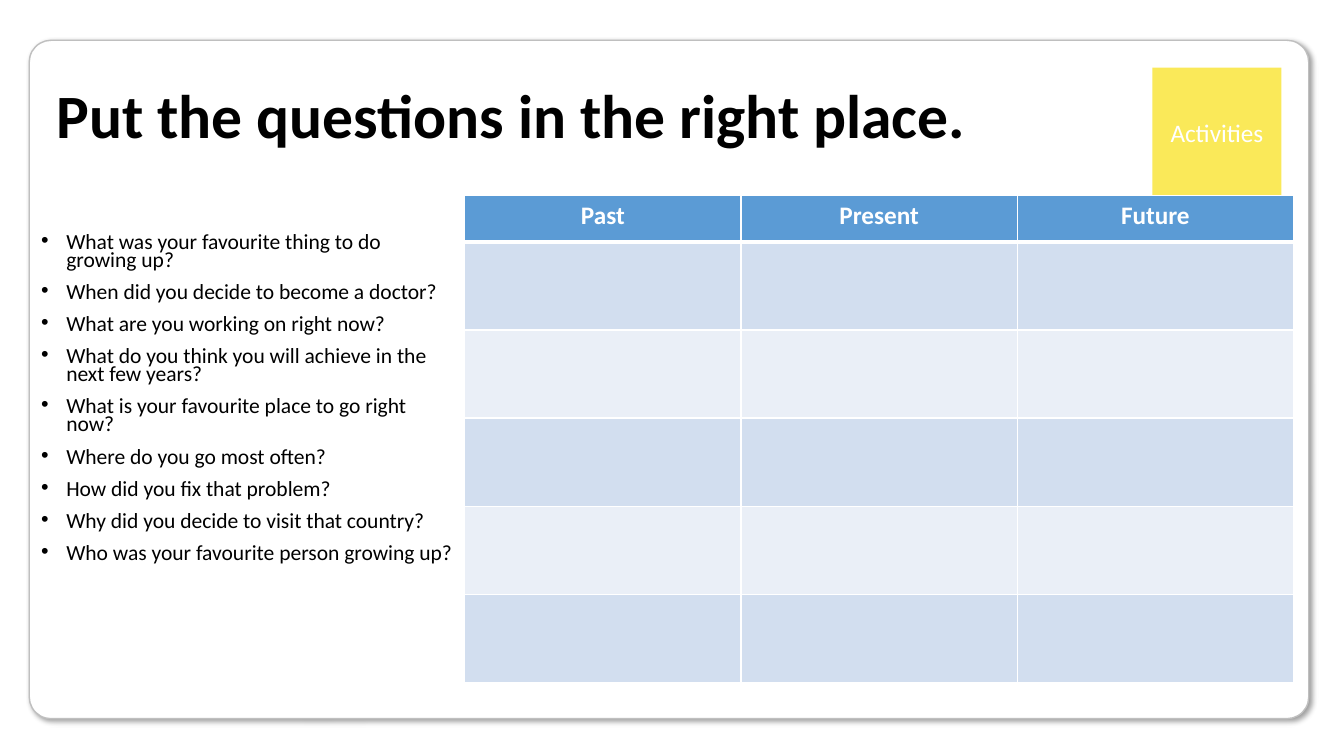
from dataclasses import dataclass

from lxml import etree
from pptx import Presentation
from pptx import util as u
from pptx.dml.color import RGBColor
from pptx.enum import shapes, text
from pptx.oxml import ns


@dataclass(frozen=True)
class Theme:
    font: str = "Calibri"
    ink: str = "000000"
    paper: str = "FFFFFF"
    frame: str = "BFBFBF"
    tag: str = "FAE959"
    header: str = "5B9BD5"
    bands: tuple = ("D2DEEF", "EAEFF7")
    title_size: float = 44
    label_size: float = 18
    question_size: float = 15.4


THEME = Theme()
TENSES = ["Past", "Present", "Future"]
QUESTIONS = [
    "What was your favourite thing to do growing up?",
    "When did you decide to become a doctor?",
    "What are you working on right now?",
    "What do you think you will achieve in the next few years?",
    "What is your favourite place to go right now?",
    "Where do you go most often?",
    "How did you fix that problem?",
    "Why did you decide to visit that country?",
    "Who was your favourite person growing up?",
]


def rgb(color):
    return RGBColor.from_string(color)


def add(parent, tag, **attrs):
    return etree.SubElement(parent, ns.qn(tag), {k: str(v) for k, v in attrs.items()})


def write(p, words, size=THEME.label_size, color=THEME.ink, bold=False,
          align=text.PP_ALIGN.LEFT, spacing=1.0, before=0):
    p.alignment = align
    p.line_spacing = spacing
    p.space_before = u.Pt(before)
    r = p.add_run()
    r.text = words
    r.font.name = THEME.font
    r.font.size = u.Pt(size)
    r.font.bold = bold
    r.font.color.rgb = rgb(color)


def add_box(s, box, kind, fill):
    sp = s.shapes.add_shape(kind, *map(u.Inches, box))
    sp.shadow.inherit = False
    sp.fill.solid()
    sp.fill.fore_color.rgb = rgb(fill)
    sp.line.fill.background()
    return sp


def add_text(s, box, anchor):
    tf = s.shapes.add_textbox(*map(u.Inches, box)).text_frame
    tf.word_wrap = True
    tf.vertical_anchor = anchor
    return tf


def add_frame(s, box):
    sp = add_box(s, box, shapes.MSO_SHAPE.ROUNDED_RECTANGLE, THEME.paper)
    sp.adjustments[0] = 0.032
    sp.line.color.rgb = rgb(THEME.frame)
    sp.line.width = u.Pt(1)
    effects = sp._element.spPr.find(ns.qn("a:effectLst"))
    shadow = add(effects, "a:outerShdw", blurRad=u.Pt(4), dist=u.Pt(3),
                 dir=45 * 60000, algn="tl", rotWithShape=0)
    add(add(shadow, "a:srgbClr", val=THEME.ink), "a:alpha", val=40000)


def add_tag(s, box):
    tf = add_box(s, box, shapes.MSO_SHAPE.RECTANGLE, THEME.tag).text_frame
    tf.vertical_anchor = text.MSO_ANCHOR.MIDDLE
    write(tf.paragraphs[0], "Activities", color=THEME.paper,
          align=text.PP_ALIGN.CENTER)


def add_title(s, box):
    tf = add_text(s, box, text.MSO_ANCHOR.MIDDLE)
    write(tf.paragraphs[0], "Put the questions in the right place.",
          size=THEME.title_size, bold=True, spacing=0.9)


def add_questions(s, box):
    tf = add_text(s, box, text.MSO_ANCHOR.TOP)
    for i, question in enumerate(QUESTIONS):
        p = tf.add_paragraph() if i else tf.paragraphs[0]
        pPr = p._p.get_or_add_pPr()
        pPr.set("marL", str(u.Inches(0.25)))
        pPr.set("indent", str(u.Inches(-0.25)))
        add(pPr, "a:buFont", typeface="Arial")
        add(pPr, "a:buChar", char="•")
        write(p, question, size=THEME.question_size, spacing=0.7,
              before=10 if i else 0)


def style_cell(cell, fill, top, bottom):
    tcPr = cell._tc.get_or_add_tcPr()
    for side, width in (("L", 1), ("R", 1), ("T", top), ("B", bottom)):
        ln = add(tcPr, f"a:ln{side}", w=u.Pt(width))
        add(add(ln, "a:solidFill"), "a:srgbClr", val=THEME.paper)
    cell.fill.solid()
    cell.fill.fore_color.rgb = rgb(fill)


def add_tense_table(s, box, header_height=0.46, answers=5):
    left, top, width, height = box
    table = s.shapes.add_table(answers + 1, len(TENSES), *map(u.Inches, box)).table
    for col in table.columns:
        col.width = u.Inches(width / len(TENSES))
    for i, row in enumerate(table.rows):
        row.height = u.Inches((height - header_height) / answers if i else header_height)
        for cell, tense in zip(row.cells, TENSES):
            fill = THEME.bands[(i - 1) % 2] if i else THEME.header
            style_cell(cell, fill, top=3 if i == 1 else 1, bottom=1 if i else 3)
            if i == 0:
                cell.margin_left = cell.margin_right = u.Inches(0.3)
                write(cell.text_frame.paragraphs[0], tense, color=THEME.paper,
                      bold=True, align=text.PP_ALIGN.CENTER)


def build_slide(prs):
    s = prs.slides.add_slide(prs.slide_layouts[6])
    add_frame(s, (0.29, 0.4, 12.69, 6.73))
    add_tag(s, (11.43, 0.67, 1.28, 1.28))
    add_title(s, (0.46, 0.4, 10.83, 1.55))
    add_tense_table(s, (4.61, 1.94, 8.22, 4.83))
    add_questions(s, (0.31, 2.28, 4.3, 4.17))


def main():
    prs = Presentation()
    prs.slide_width = u.Inches(13.33)
    prs.slide_height = u.Inches(7.5)
    build_slide(prs)
    prs.save("out.pptx")


if __name__ == "__main__":
    main()
